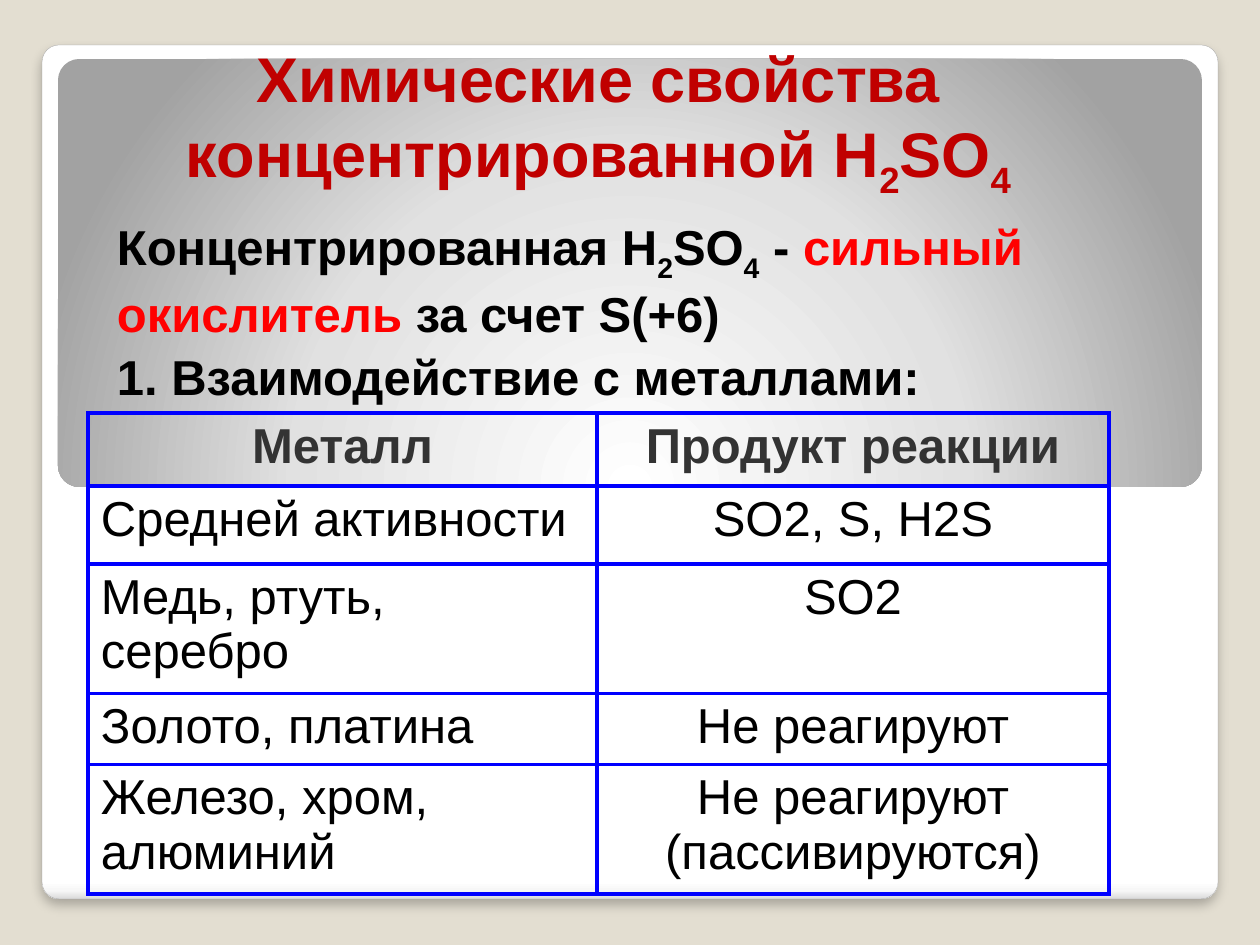
from lxml import etree
from pptx import Presentation
from pptx.dml.color import RGBColor
from pptx.enum.shapes import MSO_SHAPE
from pptx.enum.text import MSO_ANCHOR, PP_ALIGN
from pptx.oxml import parse_xml
from pptx.util import Pt

ROUND = MSO_SHAPE.ROUNDED_RECTANGLE
LEFT, MID = PP_ALIGN.LEFT, PP_ALIGN.CENTER
TOP, BOTTOM = MSO_ANCHOR.TOP, MSO_ANCHOR.BOTTOM
NS = "http://schemas.openxmlformats.org/drawingml/2006/main"
SCALE = 914400 / 126

RED, BLACK, GREY, BLUE = "C00000", "000000", "333333", "0000FF"
ROWS = [
    ("Металл", "Продукт реакции"),
    ("Средней активности", "SO2, S, H2S"),
    ("Медь, ртуть, серебро", "SO2"),
    ("Золото, платина", "Не реагируют"),
    ("Железо, хром, алюминий", "Не реагируют (пассивируются)"),
]


def px(num):
    """Turn pixels into EMU."""
    return round(num * SCALE)


def color(code):
    """Turn a hex string into a colour."""
    return RGBColor.from_string(code)


def node(xml):
    """Parse a piece of DrawingML."""
    return parse_xml(xml.replace(">", f' xmlns:a="{NS}">', 1))


def write(para, text, size=28, ink=BLACK, bold=False, base=0):
    """Add one formatted run to a paragraph."""
    run = para.add_run()
    run.text = text
    font = run.font
    font.name, font.size, font.bold = "Arial", Pt(size), bold
    font.color.rgb = color(ink)
    if base:
        font._element.set("baseline", str(base * 1000))


def frame(slide, box, pads, anchor=TOP):
    """Add a wrapping text box and return its text frame."""
    area = slide.shapes.add_textbox(*map(px, box)).text_frame
    area.word_wrap, area.vertical_anchor = True, anchor
    (area.margin_left, area.margin_top,
     area.margin_right, area.margin_bottom) = map(px, pads)
    return area


def panel(slide, box, bend, stops, way):
    """Add a rounded panel with a gradient fill."""
    shape = slide.shapes.add_shape(ROUND, *map(px, box))
    shape.adjustments[0] = bend
    shape.shadow.inherit = False
    shape.line.fill.background()
    shape.fill.background()
    marks = "".join(
        f'<a:gs pos="{pos * 1000}"><a:srgbClr val="{code}"/></a:gs>'
        for pos, code in stops)
    grad = node(f"<a:gradFill><a:gsLst>{marks}</a:gsLst>{way}</a:gradFill>")
    props = shape._element.spPr
    props.replace(props.find(f"{{{NS}}}noFill"), grad)
    return shape


def backdrop(slide, box):
    """Draw the white card and the grey panel on it."""
    left, top, width, height = box
    card = panel(slide, box, 0.02,
                 [(0, "FFFFFF"), (98, "FFFFFF"), (99, "F7F7F7"), (100, "DADADA")],
                 '<a:lin ang="5400000" scaled="0"/>')
    card.line.color.rgb = color("A4A4A4")
    card.line.width = Pt(0.16)
    glow = node('<a:outerShdw blurRad="76200" dist="50800" dir="5400000">'
                '<a:srgbClr val="000000"><a:alpha val="25000"/></a:srgbClr>'
                '</a:outerShdw>')
    card._element.spPr.find(f"{{{NS}}}effectLst").append(glow)
    panel(slide, (left + 16, top + 14, width - 32, 428), 0.05,
          [(0, "FFFFFF"), (55, "E1E1E1"), (100, "A2A2A2")],
          '<a:path path="circle"><a:fillToRect l="50000" t="175000" '
          'r="50000" b="-75000"/></a:path>')


def acid(para, lead, **form):
    """Write a lead and the formula of sulphuric acid."""
    for text, base in ((lead + "H", 0), ("2", -25), ("SO", 0), ("4", -25)):
        write(para, text, base=base, bold=True, **form)


def title(slide, box):
    """Place the heading."""
    para = frame(slide, box, (6, 6, 6, 6), BOTTOM).paragraphs[0]
    para.alignment = MID
    acid(para, "Химические свойства концентрированной ", size=36, ink=RED)


def intro(slide, box):
    """Place the two lead paragraphs."""
    area = frame(slide, box, (29, 0, 13, 6))
    first, last = area.paragraphs[0], area.add_paragraph()
    acid(first, "Концентрированная ")
    write(first, " - ", bold=True)
    write(first, "сильный окислитель ", ink="FF0000", bold=True)
    write(first, "за счет S(+6)", bold=True)
    write(last, "1. Взаимодействие с металлами:", bold=True)
    for para in (first, last):
        para.space_before = Pt(2)


def border(cell):
    """Draw blue lines on all sides of a cell."""
    props = cell._tc.get_or_add_tcPr()
    for spot, side in enumerate("LRTB"):
        line = node(f'<a:ln{side} w="28575"></a:ln{side}>')
        fill = etree.SubElement(line, f"{{{NS}}}solidFill")
        etree.SubElement(fill, f"{{{NS}}}srgbClr", val=BLUE)
        props.insert(spot, line)


def metals(slide, box, cols, tall):
    """Place the table of metals and reaction products."""
    grid = slide.shapes.add_table(len(ROWS), len(cols), *map(px, box)).table
    for col, width in zip(grid.columns, cols):
        col.width = px(width)
    for row, high, texts in zip(grid.rows, tall, ROWS):
        row.height = px(high)
        head = texts is ROWS[0]
        for spot, (cell, text) in enumerate(zip(row.cells, texts)):
            cell.fill.background()
            cell.margin_left = cell.margin_right = px(13)
            cell.margin_top = cell.margin_bottom = px(6)
            border(cell)
            para = cell.text_frame.paragraphs[0]
            para.alignment = MID if head or spot else LEFT
            write(para, text, ink=GREY if head else BLACK, bold=head)


def main():
    """Build and save the slide."""
    deck = Presentation()
    deck.slide_width, deck.slide_height = px(1260), px(945)
    slide = deck.slides.add_slide(deck.slide_layouts[6])
    back = slide.background.fill
    back.solid()
    back.fore_color.rgb = color("E3DED1")
    backdrop(slide, (42, 45, 1176, 854))
    title(slide, (88, 20, 1021, 187))
    intro(slide, (88, 217, 1081, 517))
    metals(slide, (88, 413, 1021, 467), (509, 512), (73, 78, 123, 70, 123))
    deck.save("out.pptx")


if __name__ == "__main__":
    main()
